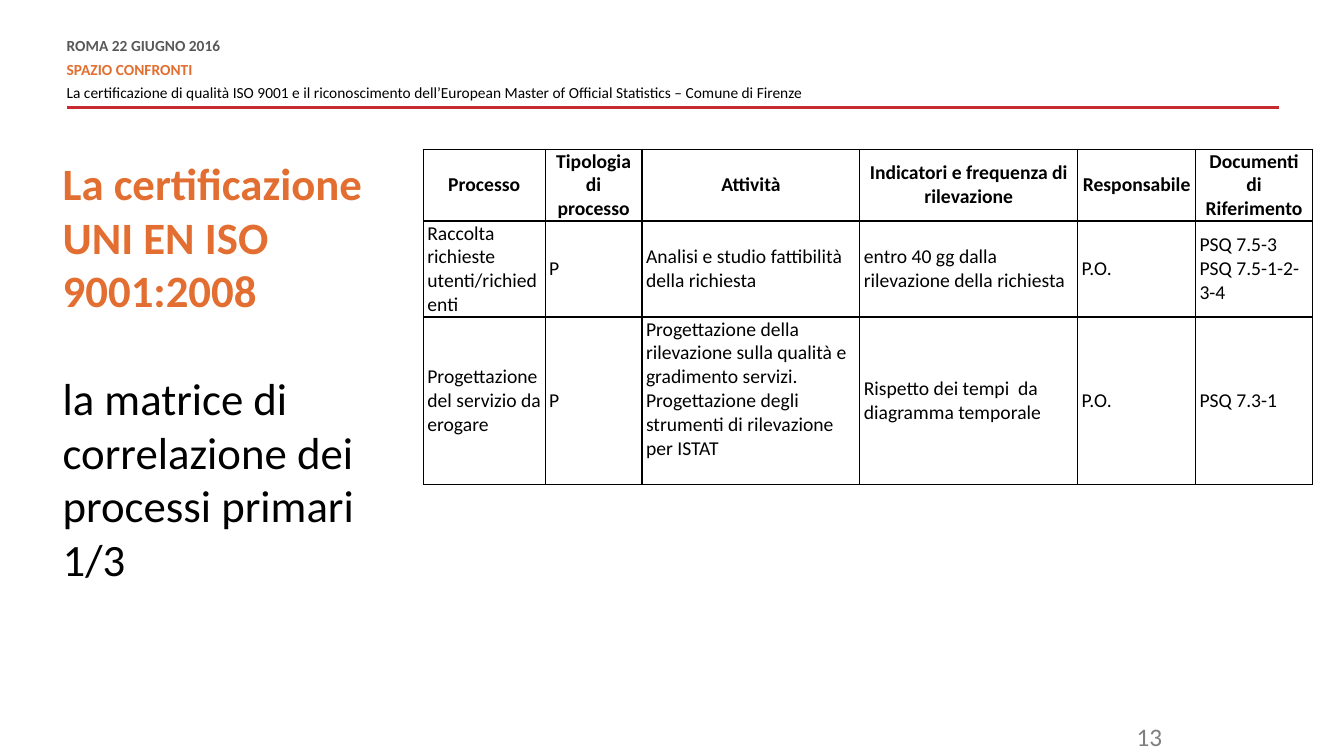
import pptx
import pptx.dml.color
import pptx.enum.text
import pptx.oxml
import pptx.oxml.ns
import pptx.util
from lxml import etree
from pptx.util import Cm

ORANGE = pptx.dml.color.RGBColor(0xE2, 0x6F, 0x31)
RED = pptx.dml.color.RGBColor(0xC7, 0x2A, 0x31)
DARK_GRAY = pptx.dml.color.RGBColor(0x59, 0x59, 0x59)
GRAY = pptx.dml.color.RGBColor(0x7F, 0x7F, 0x7F)
BLACK = pptx.dml.color.RGBColor(0, 0, 0)
FONT = "Calibri"
ALIGN = pptx.enum.text.PP_ALIGN

COLUMN_WIDTHS = [3.07, 2.44, 5.49, 5.49, 2.97, 2.95]
ROW_HEIGHTS = [1.81, 2.42, 4.22]
PROCESSES = [
    ["Processo", "Tipologia di processo", "Attività",
     "Indicatori e frequenza di rilevazione", "Responsabile",
     "Documenti di Riferimento"],
    ["Raccolta richieste utenti/richiedenti", "P",
     "Analisi e studio fattibilità della richiesta",
     "entro 40 gg dalla rilevazione della richiesta", "P.O.",
     "PSQ 7.5-3 PSQ 7.5-1-2-3-4"],
    ["Progettazione del servizio da erogare", "P",
     "Progettazione della rilevazione sulla qualità e gradimento servizi. "
     "Progettazione degli strumenti di rilevazione per ISTAT",
     "Rispetto dei tempi  da diagramma temporale", "P.O.", "PSQ 7.3-1"],
]


def style_font(font, size, color, bold=False):
    font.name = FONT
    font.size = pptx.util.Pt(size)
    font.color.rgb = color
    font.bold = bold


def add_text(slide, left, top, width, height, lines, size, line_spacing=None, inset=0):
    """Add a text box with one paragraph per (text, color, bold) line."""
    box = slide.shapes.add_textbox(Cm(left), Cm(top), Cm(width), Cm(height))
    frame = box.text_frame
    frame.word_wrap = True
    frame.margin_left = frame.margin_right = Cm(inset)
    frame.margin_top = frame.margin_bottom = Cm(inset / 2)
    frame.text = "\n".join(text for text, color, bold in lines)
    for paragraph, (text, color, bold) in zip(frame.paragraphs, lines):
        if line_spacing:
            paragraph.line_spacing = pptx.util.Pt(line_spacing)
        for run in paragraph.runs:
            style_font(run.font, size, color, bold)
    return frame.paragraphs


def add_header(slide, left, top, width, height):
    # Event lines
    paragraphs = add_text(slide, left, top, 21.18, height, [
        ("ROMA 22 GIUGNO 2016", DARK_GRAY, True),
        ("SPAZIO CONFRONTI", ORANGE, True),
        ("La certificazione di qualità ISO 9001 e il riconoscimento dell’European "
         "Master of Official Statistics – Comune di Firenze", BLACK, False),
    ], 11, line_spacing=10.8)
    for paragraph in paragraphs:
        paragraph.space_after = pptx.util.Pt(6)

    # Rule under the header
    rule_top = Cm(top + height)
    rule = slide.shapes.add_connector(
        pptx.enum.shapes.MSO_CONNECTOR.STRAIGHT,
        Cm(left + width), rule_top, Cm(left), rule_top)
    rule.line.color.rgb = RED
    rule.line.width = pptx.util.Pt(2)
    etree.SubElement(rule._element.spPr, pptx.oxml.ns.qn("a:effectLst"))


def add_title(slide, left, top, width, height):
    line_spacing = 38.4
    paragraphs = add_text(slide, left, top, width, height, [
        ("La certificazione UNI EN ISO 9001:2008", ORANGE, True),
        ("la matrice di correlazione dei processi primari", BLACK, False),
        ("1/3", BLACK, False),
    ], 32, line_spacing)
    paragraphs[1].space_before = pptx.util.Pt(line_spacing)


def add_borders(cell):
    properties = cell._tc.get_or_add_tcPr()
    for position, side in enumerate(("lnL", "lnR", "lnT", "lnB")):
        border = pptx.oxml.parse_xml(
            f'<a:{side} {pptx.oxml.ns.nsdecls("a")} w="12700">'
            f'<a:solidFill><a:srgbClr val="{BLACK}"/></a:solidFill></a:{side}>')
        properties.insert(position, border)


def add_process_table(slide, left, top):
    frame = slide.shapes.add_table(
        len(ROW_HEIGHTS), len(COLUMN_WIDTHS), Cm(left), Cm(top),
        Cm(sum(COLUMN_WIDTHS)), Cm(sum(ROW_HEIGHTS)))
    table = frame.table
    table.first_row = table.horz_banding = False
    for column, width in zip(table.columns, COLUMN_WIDTHS):
        column.width = Cm(width)
    for row_index, (row, height) in enumerate(zip(table.rows, ROW_HEIGHTS)):
        row.height = Cm(height)
        is_heading = row_index == 0
        for cell, text in zip(row.cells, PROCESSES[row_index]):
            cell.text = text
            cell.fill.background()
            cell.vertical_anchor = pptx.enum.text.MSO_ANCHOR.MIDDLE
            cell.margin_left = cell.margin_right = Cm(0.1)
            cell.margin_top = cell.margin_bottom = 0
            paragraph = cell.text_frame.paragraphs[0]
            paragraph.alignment = ALIGN.CENTER if is_heading else ALIGN.LEFT
            style_font(paragraph.runs[0].font, 14, BLACK, is_heading)
            add_borders(cell)
    # Room for one line below the longest activity
    table.cell(2, 2).margin_bottom = Cm(0.6)


def add_page_number(slide, left, top, width, height):
    paragraphs = add_text(slide, left, top, width, height,
                          [("13", GRAY, False)], 18, inset=0.25)
    paragraphs[0].alignment = ALIGN.RIGHT


def main():
    presentation = pptx.Presentation()
    presentation.slide_width = Cm(33.87)
    presentation.slide_height = Cm(19.05)
    slide = presentation.slides.add_slide(presentation.slide_layouts[6])
    add_header(slide, 1.68, 1, 30.55, 1.7)
    add_title(slide, 1.58, 3.92, 8.4, 9.65)
    add_process_table(slide, 10.67, 3.76)
    add_page_number(slide, 21.92, 18.06, 7.62, 1.02)
    presentation.save("out.pptx")


if __name__ == "__main__":
    main()
